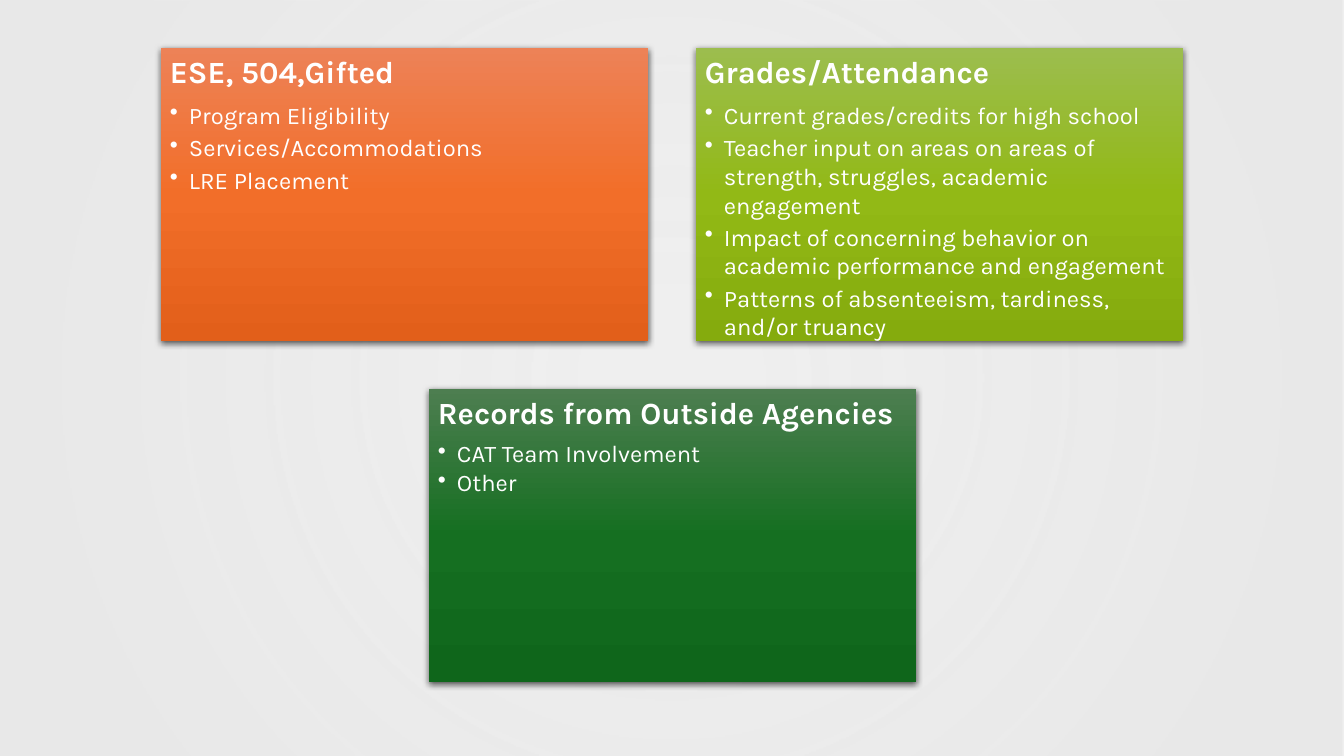
import pptx
import pptx.dml.color
import pptx.enum.shapes
import pptx.enum.text
import pptx.oxml
import pptx.oxml.ns
import pptx.util
import lxml.etree

RGBColor = pptx.dml.color.RGBColor
qn = pptx.oxml.ns.qn

WHITE = RGBColor(0xFF, 0xFF, 0xFF)
BLACK = RGBColor(0x00, 0x00, 0x00)
LIGHT_GREY = RGBColor(0xE8, 0xE8, 0xE8)
ORANGE = (RGBColor(0xED, 0x82, 0x57), RGBColor(0xF2, 0x6E, 0x29), RGBColor(0xE2, 0x5F, 0x1A))
LIME = (RGBColor(0x9C, 0xBD, 0x4E), RGBColor(0x92, 0xB9, 0x16), RGBColor(0x85, 0xAB, 0x0D))
GREEN = (RGBColor(0x4D, 0x7E, 0x50), RGBColor(0x15, 0x6F, 0x21), RGBColor(0x0F, 0x66, 0x1B))

SLIDE_WIDTH, SLIDE_HEIGHT = 1344, 756
CARD_WIDTH, CARD_HEIGHT = 487, 293
GAP = 48
CARDS_PER_ROW = 2

# Title, colours, bullet line spacing, bullets
CARDS = [
    ("ESE, 504,Gifted", ORANGE, 1.0,
     ["Program Eligibility", "Services/Accommodations", "LRE Placement"]),
    ("Grades/Attendance", LIME, 1.0,
     ["Current grades/credits for high school",
      "Teacher input on areas on areas of strength, struggles, academic engagement",
      "Impact of concerning behavior on academic performance and engagement",
      "Patterns of absenteeism, tardiness, and/or truancy"]),
    ("Records from Outside Agencies", GREEN, 0.9,
     ["CAT Team Involvement", "Other"]),
]


def px(length):
    return pptx.util.Emu(round(length * 914400 / 100.8))


class SlideBuilder:
    font = "Karla"
    title_size = 22
    bullet_size = 17
    inset = 9
    indent = 19

    def __init__(self, slide):
        self.slide = slide

    def rectangle(self, left, top, width, height, stops, direction):
        """Add a rectangle; stops are (position %, colour, opacity %)."""
        shape = self.slide.shapes.add_shape(
            pptx.enum.shapes.MSO_SHAPE.RECTANGLE, px(left), px(top), px(width), px(height))
        shape.shadow.inherit = False
        shape.line.fill.background()
        shape.fill.gradient()
        gradient = shape.element.spPr.find(qn("a:gradFill"))
        for child in list(gradient):
            gradient.remove(child)
        stop_list = lxml.etree.SubElement(gradient, qn("a:gsLst"))
        for position, color, opacity in stops:
            stop = lxml.etree.SubElement(stop_list, qn("a:gs"), pos=str(position * 1000))
            self.color(stop, color, opacity)
        gradient.append(pptx.oxml.parse_xml(direction))
        return shape

    def color(self, parent, color, opacity):
        element = lxml.etree.SubElement(parent, qn("a:srgbClr"), val=str(color))
        if opacity < 100:
            lxml.etree.SubElement(element, qn("a:alpha"), val=str(opacity * 1000))

    def backdrop(self):
        namespace = pptx.oxml.ns.nsdecls("a")
        self.rectangle(
            0, 0, SLIDE_WIDTH, SLIDE_HEIGHT,
            [(10, LIGHT_GREY, 68), (85, LIGHT_GREY, 97)],
            f'<a:path {namespace} path="circle">'
            '<a:fillToRect l="50000" t="50000" r="50000" b="50000"/></a:path>')

    def drop_shadow(self, shape):
        effects = shape.element.spPr.find(qn("a:effectLst"))
        shadow = lxml.etree.SubElement(
            effects, qn("a:outerShdw"), blurRad=str(pptx.util.Pt(4.5)),
            dist=str(pptx.util.Pt(1.5)), dir="5400000", algn="ctr", rotWithShape="0")
        self.color(shadow, BLACK, 63)

    def text_line(self, paragraph, text, size, bold, spacing):
        paragraph.alignment = pptx.enum.text.PP_ALIGN.LEFT
        paragraph.line_spacing = spacing
        paragraph.space_before = pptx.util.Pt(0)
        run = paragraph.add_run()
        run.text = text
        run.font.name = self.font
        run.font.size = pptx.util.Pt(size)
        run.font.bold = bold
        run.font.color.rgb = WHITE

    def bullet(self, paragraph, text, spacing):
        self.text_line(paragraph, text, self.bullet_size, False, spacing)
        paragraph.level = 1
        paragraph.space_after = pptx.util.Pt(self.bullet_size * 0.15)
        properties = paragraph._p.get_or_add_pPr()
        properties.set("marL", str(px(self.indent)))
        properties.set("indent", str(px(-self.indent)))
        lxml.etree.SubElement(properties, qn("a:buChar"), char="•")

    def card(self, left, top, title, colors, spacing, bullets):
        namespace = pptx.oxml.ns.nsdecls("a")
        shape = self.rectangle(
            left, top, CARD_WIDTH, CARD_HEIGHT,
            [(50 * index, color, 100) for index, color in enumerate(colors)],
            f'<a:lin {namespace} ang="5400000" scaled="0"/>')
        self.drop_shadow(shape)
        frame = shape.text_frame
        frame.word_wrap = True
        frame.vertical_anchor = pptx.enum.text.MSO_ANCHOR.TOP
        frame.margin_left = frame.margin_right = px(self.inset)
        frame.margin_top = frame.margin_bottom = px(self.inset)
        heading = frame.paragraphs[0]
        self.text_line(heading, title, self.title_size, True, 0.9)
        heading.space_after = pptx.util.Pt(self.title_size * 0.35)
        for text in bullets:
            self.bullet(frame.add_paragraph(), text, spacing)


def main():
    presentation = pptx.Presentation()
    presentation.slide_width = px(SLIDE_WIDTH)
    presentation.slide_height = px(SLIDE_HEIGHT)
    builder = SlideBuilder(presentation.slides.add_slide(presentation.slide_layouts[6]))

    # Soft grey background
    builder.backdrop()

    # Cards in centred rows
    for start in range(0, len(CARDS), CARDS_PER_ROW):
        row = CARDS[start:start + CARDS_PER_ROW]
        row_width = len(row) * (CARD_WIDTH + GAP) - GAP
        left = (SLIDE_WIDTH - row_width + 1) // 2
        top = GAP + start // CARDS_PER_ROW * (CARD_HEIGHT + GAP)
        for column, card in enumerate(row):
            builder.card(left + column * (CARD_WIDTH + GAP), top, *card)

    presentation.save("out.pptx")


if __name__ == "__main__":
    main()
